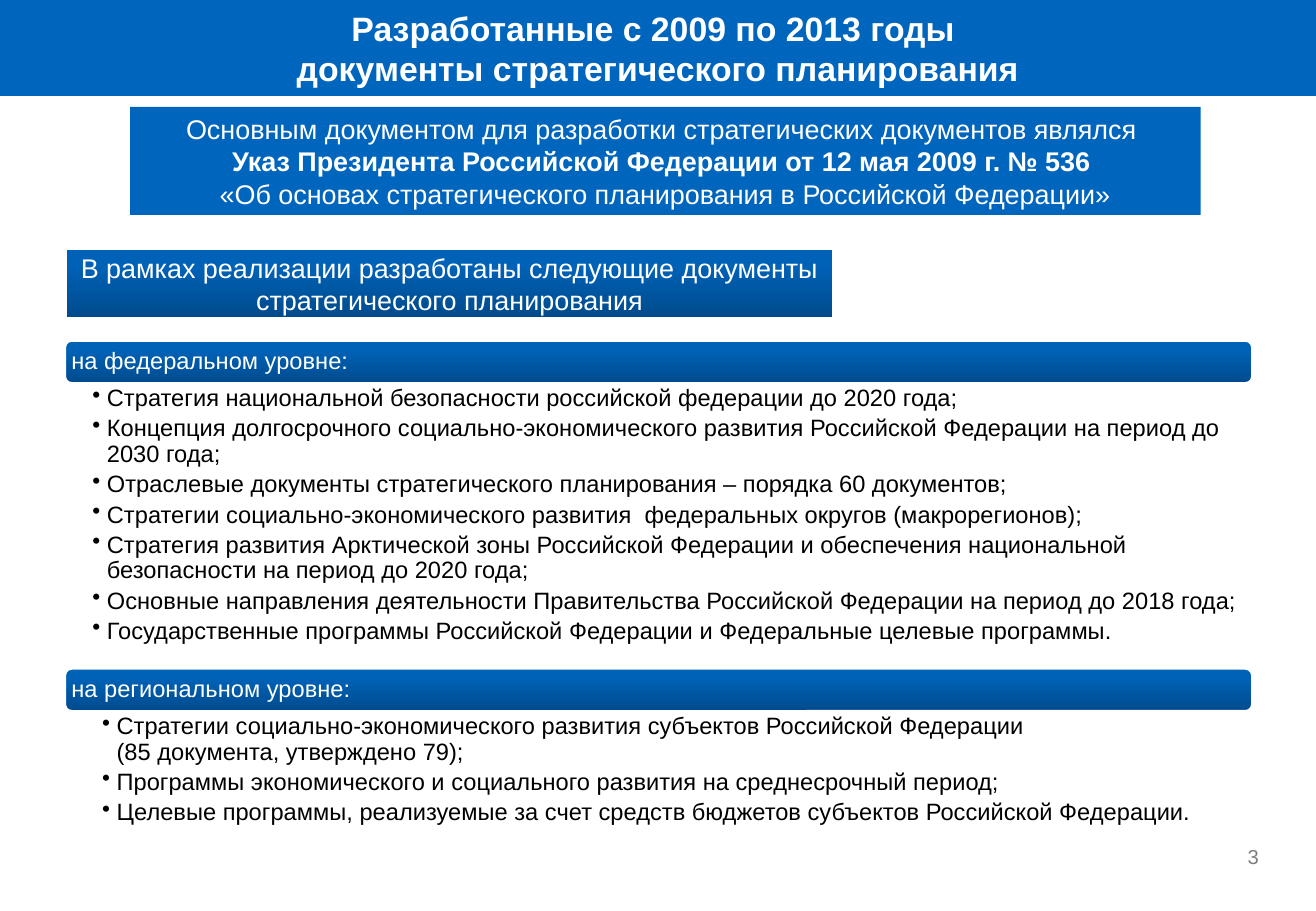
from lxml.etree import SubElement
from pptx import Presentation
from pptx.dml.color import RGBColor
from pptx.enum.shapes import MSO_SHAPE as Shape
from pptx.enum.text import MSO_ANCHOR as Anchor, MSO_AUTO_SIZE as Auto, PP_ALIGN as Align
from pptx.oxml.ns import qn
from pptx.util import Inches, Pt

# Content
TITLE = ["Разработанные с 2009 по 2013 годы \nдокументы стратегического планирования"]
DECREE = [
    "Основным документом для разработки стратегических документов являлся ",
    "Указ Президента Российской Федерации от 12 мая 2009 г. № 536 ",
    "«Об основах стратегического планирования в Российской Федерации»",
]
INTRO = ["В рамках реализации разработаны следующие документы стратегического планирования"]
LEVELS = [  # heading, top, list height, list inset, items
    ("на федеральном уровне:", 2.8, 2.35, 0.23, [
        "Стратегия национальной безопасности российской федерации до 2020 года;",
        "Концепция долгосрочного социально-экономического развития Российской Федерации на период до 2030 года;",
        "Отраслевые документы стратегического планирования – порядка 60 документов;",
        "Стратегии социально-экономического развития  федеральных округов (макрорегионов);",
        "Стратегия развития Арктической зоны Российской Федерации и обеспечения национальной безопасности на период до 2020 года;",
        "Основные направления деятельности Правительства Российской Федерации на период до 2018 года;",
        "Государственные программы Российской Федерации и Федеральные целевые программы.",
    ]),
    ("на региональном уровне:", 5.5, 0.95, 0.31, [
        "Стратегии социально-экономического развития субъектов Российской Федерации \n(85 документа, утверждено 79);",
        "Программы экономического и социального развития на среднесрочный период;",
        "Целевые программы, реализуемые за счет средств бюджетов субъектов Российской Федерации.",
    ]),
]
PAGE = "3"
COLORS = {"blue": "0065BD", "dark": "004B8D", "light": "0062B7",
          "white": "FFFFFF", "black": "000000", "gray": "7F7F7F"}
LEFT, WIDTH, BAR = 0.53, 9.78, 0.36


def rgb(name):
    return RGBColor.from_string(COLORS[name])


def write(shape, lines, size=14, color="white", bold=(), align=Align.CENTER,
          anchor=Anchor.MIDDLE, inset=(0.1, 0.05, 0.1, 0.05), space=1.0,
          after=0, bullet=False):
    frame = shape.text_frame
    frame.word_wrap, frame.auto_size = True, Auto.NONE
    frame.vertical_anchor = anchor
    (frame.margin_left, frame.margin_top,
     frame.margin_right, frame.margin_bottom) = map(Inches, inset)
    for i, line in enumerate(lines):
        para = frame.add_paragraph() if i else frame.paragraphs[0]
        para.text = line
        para.alignment = align
        para.line_spacing, para.space_after = space, Pt(after)
        if bullet:
            props = para._p.get_or_add_pPr()
            props.set("marL", str(Inches(0.12)))
            props.set("indent", str(-Inches(0.12)))
            SubElement(props, qn("a:buChar"), char="•")
        for run in para.runs:
            font = run.font
            font.name, font.size, font.bold = "Arial", Pt(size), i in bold
            font.color.rgb = rgb(color)
        for gap in para._p.findall(qn("a:br")):
            SubElement(gap, qn("a:rPr"), sz=str(size * 100))


def block(kind, box, shade=False, edge=False):
    shape = slide.shapes.add_shape(kind, *map(Inches, box))
    shape.shadow.inherit = False
    if shade:
        shape.fill.gradient()
        shape.fill.gradient_angle = 90
        for stop, name, pos in zip(shape.fill.gradient_stops, ("dark", "light"), (0, 0.8)):
            stop.color.rgb, stop.position = rgb(name), pos
    else:
        shape.fill.solid()
        shape.fill.fore_color.rgb = rgb("blue")
    if edge:
        shape.line.color.rgb, shape.line.width = rgb("white"), Pt(2)
    else:
        shape.line.fill.background()
    return shape


def label(*box):
    return slide.shapes.add_textbox(*map(Inches, box))


deck = Presentation()
deck.slide_width, deck.slide_height = Inches(10.83), Inches(7.5)
slide = deck.slides.add_slide(deck.slide_layouts[5])

# Title band
title = slide.shapes.title
title.left, title.top, title.width, title.height = map(Inches, (0, 0, 10.83, 0.79))
title.fill.solid()
title.fill.fore_color.rgb = rgb("blue")
write(title, TITLE, size=20, bold=(0,))

# Decree and introduction
write(block(Shape.RECTANGLE, (1.07, 0.88, 8.81, 0.89)), DECREE, size=16, bold=(1,))
write(block(Shape.RECTANGLE, (0.55, 2.06, 6.3, 0.55), shade=True), INTRO, size=16)

# Levels: heading bar with its list below
for head, top, height, inset, items in LEVELS:
    bar = block(Shape.ROUNDED_RECTANGLE, (LEFT, top, WIDTH, BAR), shade=True, edge=True)
    write(bar, [head], align=Align.LEFT, inset=(0.04, 0.04, 0.04, 0.04), space=0.9)
    write(label(LEFT, top + BAR, WIDTH, height), items, color="black", align=Align.LEFT,
          anchor=Anchor.TOP, inset=(inset, 0.02, 0.11, 0.02), space=0.9, after=2.8, bullet=True)

# Page number
write(label(9.84, 6.98, 0.52, 0.14), [PAGE], size=12, color="gray",
      align=Align.RIGHT, inset=(0, 0, 0, 0))

deck.save("out.pptx")
